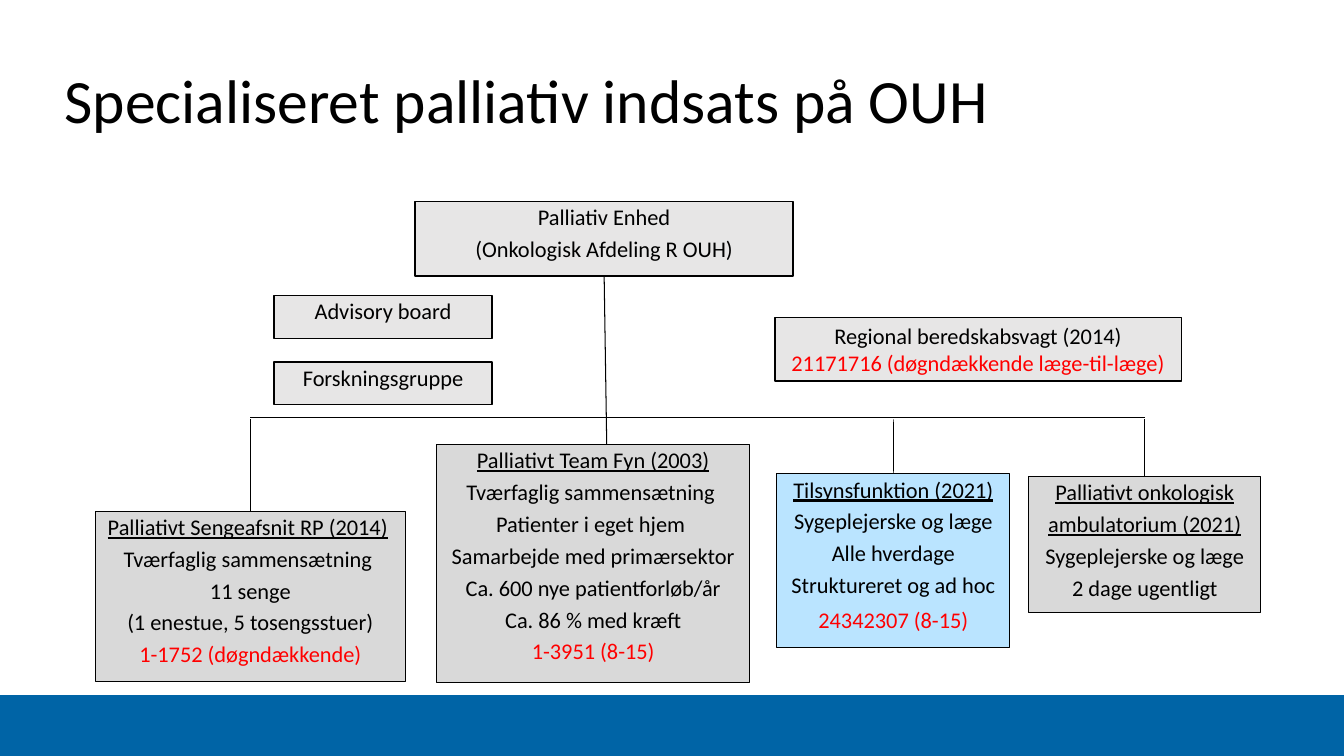
from lxml import etree
from pptx import Presentation
from pptx import util as u
from pptx.dml.color import RGBColor
from pptx.enum import shapes, text
from pptx.oxml.ns import qn

Cm, Pt = u.Cm, u.Pt
HEX = {"blue": "0064A6", "sky": "BAE4FF", "gray": "D9D9D9",
       "pale": "E7E6E6", "black": "000000", "red": "FF0000"}
RGB = {name: RGBColor.from_string(code) for name, code in HEX.items()}


def add_box(area, fill, line, width):
    box = slide.shapes.add_shape(shapes.MSO_SHAPE.RECTANGLE, *map(Cm, area))
    box.shadow.inherit = False
    box.fill.solid()
    box.fill.fore_color.rgb = RGB[fill]
    box.line.color.rgb = RGB[line]
    box.line.width = Pt(width)
    return box


def add_run(para, words, size, color="black"):
    run = para.add_run()
    run.text = words
    run.font.name = "Calibri"
    run.font.size = Pt(size)
    run.font.color.rgb = RGB[color]
    return run


deck = Presentation()
deck.slide_width, deck.slide_height = Cm(33.87), Cm(19.05)
slide = deck.slides.add_slide(deck.slide_layouts[5])

add_box((0, 17.53, 33.87, 1.52), "blue", "blue", 1)

title = slide.shapes.title
title.left, title.top, title.width, title.height = map(Cm, (1.37, 0.76, 29.21, 3.68))
frame = title.text_frame
frame.word_wrap = True
frame.vertical_anchor = text.MSO_ANCHOR.MIDDLE
para = frame.paragraphs[0]
para.alignment = text.PP_ALIGN.LEFT
para.line_spacing = 0.9
add_run(para, "Specialiseret palliativ indsats på OUH", 44)

units = [
    ("ward", (2.41, 12.88, 7.8, 4.29), "gray", 0.75,
     ["Palliativt Sengeafsnit RP (2014) "],
     ["Tværfaglig sammensætning ", "11 senge", "(1 enestue, 5 tosengsstuer)"],
     "1-1752 (døgndækkende)"),
    ("team", (11, 11.2, 7.9, 5.99), "gray", 0.75,
     ["Palliativt Team Fyn (2003)"],
     ["Tværfaglig sammensætning ", "Patienter i eget hjem ",
      "Samarbejde med primærsektor", "Ca. 600 nye patientforløb/år",
      "Ca. 86 % med kræft"],
     "1-3951 (8-15)"),
    ("visit", (19.58, 11.94, 5.87, 4.37), "sky", 0.75,
     ["Tilsynsfunktion (2021)"],
     ["Sygeplejerske og læge", "Alle hverdage", "Struktureret og ad hoc"],
     "24342307 (8-15)"),
    ("clinic", (25.93, 12.01, 5.84, 3.43), "gray", 0.75,
     ["Palliativt onkologisk", "ambulatorium (2021)"],
     ["Sygeplejerske og læge", "2 dage ugentligt"], None),
    ("head", (10.46, 5.08, 9.53, 1.88), "pale", 1, [],
     ["Palliativ Enhed", "(Onkologisk Afdeling R OUH)"], None),
    ("board", (6.91, 7.44, 5.49, 1.09), "pale", 1, [], ["Advisory board"], None),
    ("study", (6.91, 9.12, 5.49, 1.07), "pale", 1, [], ["Forskningsgruppe"], None),
    ("guard", (19.53, 8, 10.24, 1.6), "pale", 1, [],
     ["Regional beredskabsvagt (2014)"], "21171716 (døgndækkende læge-til-læge)"),
]
boxes = {}
for name, area, fill, width, heads, lines, phone in units:
    box = boxes[name] = add_box(area, fill, "black", width)
    frame = box.text_frame
    frame.word_wrap = width == 1
    frame.vertical_anchor = (text.MSO_ANCHOR.MIDDLE if name == "guard"
                             else text.MSO_ANCHOR.TOP)
    rows = heads + lines + ([phone] if phone else [])
    for i, row in enumerate(rows):
        para = frame.paragraphs[0] if i == 0 else frame.add_paragraph()
        para.alignment = text.PP_ALIGN.CENTER
        if name != "guard" and not (name == "visit" and row == phone):
            para.line_spacing = 0.9
            para.space_after = Pt(5.5)
        run = add_run(para, row.rstrip(), 16, "red" if row == phone else "black")
        if i < len(heads):
            run.font.underline = True
        if row.endswith(" "):
            add_run(para, " ", 16)

bar = 10.52
links = [
    ((15.23, 6.96), (15.29, 11.2), 0.75, "head", None),
    ((15.24, bar), (28.85, bar), 0.5, None, None),
    ((15.29, bar), (6.31, bar), 0.75, None, None),
]
for name, x, y in [("ward", 6.31, 12.88), ("visit", 22.52, 11.94),
                   ("clinic", 28.85, 12.01)]:
    links.append(((x, bar + 0.05), (x, y), 0.5, None, name))
for start, end, width, source, goal in links:
    link = slide.shapes.add_connector(shapes.MSO_CONNECTOR.STRAIGHT,
                                      *map(Cm, start + end))
    if source:
        link.begin_connect(boxes[source], 2)
    if goal:
        link.end_connect(boxes[goal], 0)
    link.line.color.rgb = RGB["black"]
    link.line.width = Pt(width)
    etree.SubElement(link._element.spPr, qn("a:effectLst"))

deck.save("out.pptx")
